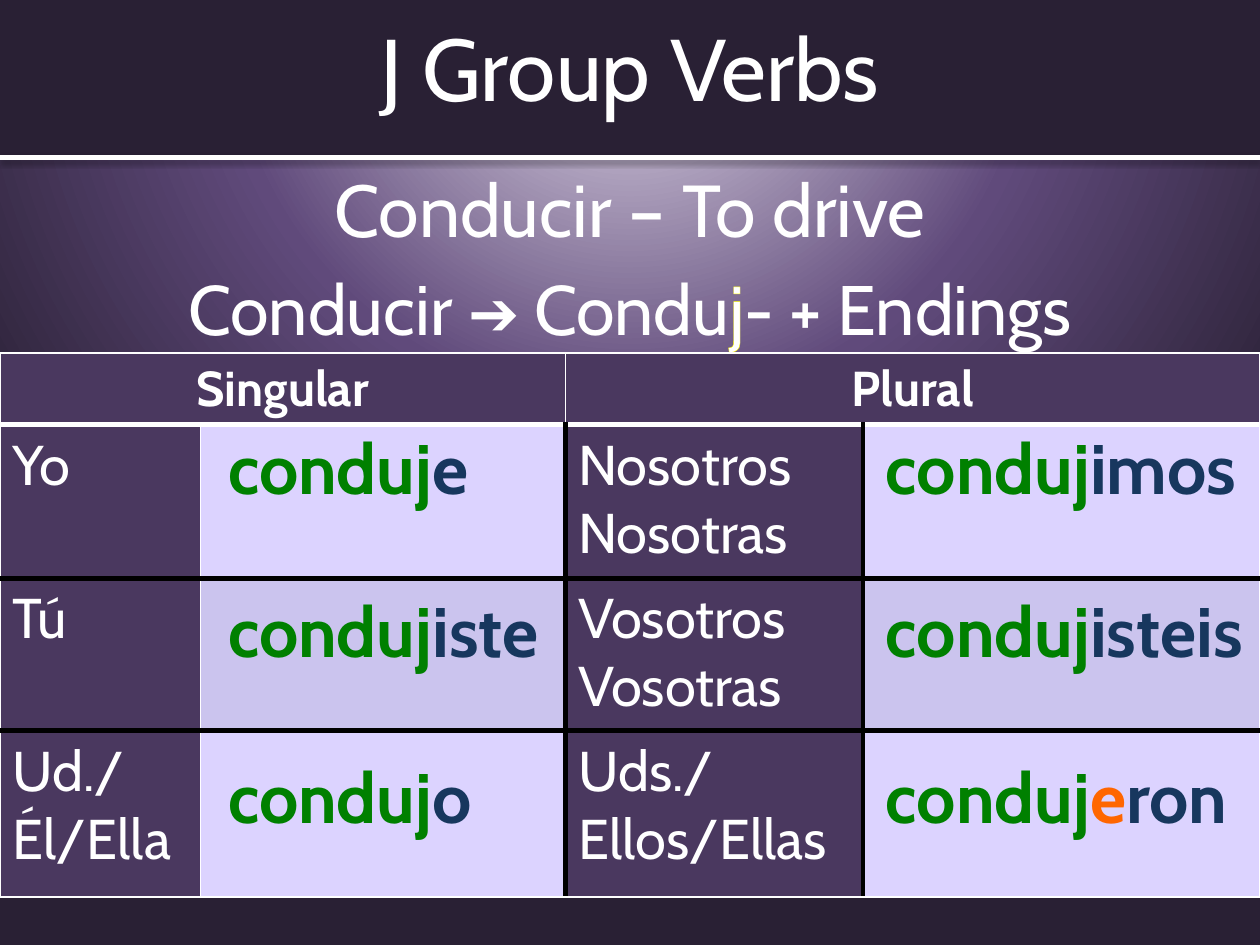
from lxml import etree
from pptx import Presentation
from pptx.dml.color import RGBColor
from pptx.enum.shapes import MSO_CONNECTOR, MSO_SHAPE
from pptx.enum.text import MSO_ANCHOR, PP_ALIGN
from pptx.oxml import parse_xml
from pptx.oxml.ns import nsdecls, qn
from pptx.util import Inches, Pt

WHITE = RGBColor(0xFF, 0xFF, 0xFF)
BLACK = RGBColor(0x00, 0x00, 0x00)
NIGHT = RGBColor(0x29, 0x20, 0x34)
PURPLE = RGBColor(0x4A, 0x38, 0x5F)
LILAC = RGBColor(0xDC, 0xD3, 0xFF)
LILAC_DARK = RGBColor(0xCB, 0xC4, 0xEE)
GREEN = RGBColor(0x00, 0x80, 0x00)
NAVY = RGBColor(0x17, 0x37, 0x5E)
ORANGE = RGBColor(0xFF, 0x66, 0x00)
YELLOW = RGBColor(0xFF, 0xFF, 0x00)

FONT = "Cabin"
NO_STYLE = "{2D5ABB26-0587-4C30-8999-92F81FD0307C}"
BACKGROUND_STOPS = [(0, "E6E0EC"), (52, "604A7B"), (100, "292034")]

TITLE = "J Group Verbs"
INFINITIVE = "Conducir – To drive"
STEM_RULE = [("Conducir ", 40, FONT), ("➔", 35, "Arial"), (" ", 30, "Arial"),
             ("Condu", 40, FONT), ("j", 40, FONT), ("- + Endings", 40, FONT)]
HEADINGS = ["Singular", "Plural"]
PRONOUNS = [
    (["Yo"], ["Nosotros", "Nosotras"]),
    (["Tú"], ["Vosotros", "Vosotras"]),
    (["Ud./Él/Ella"], ["Uds./Ellos/Ellas"]),
]
STEM = "conduj"
ENDINGS = [
    ([("e", NAVY)], [("imos", NAVY)]),
    ([("iste", NAVY)], [("isteis", NAVY)]),
    ([("o", NAVY)], [("e", ORANGE), ("ron", NAVY)]),
]

GRID_TOP = 2.8
COLUMN_WIDTHS = [1.59, 2.9, 2.36, 3.15]
ROW_HEIGHTS = [0.57, 1.22, 1.21, 1.32]
FORM_LEFTS = [1.71, 6.93]
FORM_WIDTHS = [2.72, 3.07]
FORM_TOPS = [3.34, 4.63, 5.95]
FORM_HEIGHT = 0.77


def add_run(paragraph, text, size, color=WHITE, font=FONT, bold=False):
    run = paragraph.add_run()
    run.text = text
    run.font.size = Pt(size)
    run.font.name = font
    run.font.bold = bold
    run.font.color.rgb = color
    return run


def set_background(slide):
    """Fill the slide with a circular gradient centred above its top edge."""
    slide.background.fill.gradient()
    stops = "".join(f'<a:gs pos="{pos * 1000}"><a:srgbClr val="{color}"/></a:gs>'
                    for pos, color in BACKGROUND_STOPS)
    gradient = parse_xml(
        f'<a:gradFill {nsdecls("a")} rotWithShape="1"><a:gsLst>{stops}</a:gsLst>'
        '<a:path path="circle"><a:fillToRect l="50000" t="-80000" r="50000" b="180000"/>'
        '</a:path></a:gradFill>')
    old = next(slide.element.iter(qn("a:gradFill")))
    old.getparent().replace(old, gradient)


def add_text_box(slide, top, height, anchor):
    box = slide.shapes.add_textbox(0, Inches(top), Inches(10), Inches(height))
    frame = box.text_frame
    frame.word_wrap = True
    frame.vertical_anchor = anchor
    frame.paragraphs[0].alignment = PP_ALIGN.CENTER
    return frame


def add_header(slide):
    band = slide.shapes.add_shape(MSO_SHAPE.RECTANGLE, 0, 0, Inches(10), Inches(1.25))
    band.shadow.inherit = False
    band.fill.solid()
    band.fill.fore_color.rgb = NIGHT
    band.line.fill.background()

    explanation = add_text_box(slide, 1.25, 5.2, MSO_ANCHOR.TOP)
    infinitive = explanation.paragraphs[0]
    infinitive.space_before = Pt(8)
    add_run(infinitive, INFINITIVE, 42)
    rule = explanation.add_paragraph()
    rule.alignment = PP_ALIGN.CENTER
    rule.space_before = Pt(8)
    for text, size, font in STEM_RULE:
        run = add_run(rule, text, size, font=font)
        if text == "j":
            run.font._element.insert(0, line_xml("ln", 0.75, YELLOW))

    divider = slide.shapes.add_connector(
        MSO_CONNECTOR.STRAIGHT, 0, Inches(1.25), Inches(10), Inches(1.25))
    divider.line.color.rgb = WHITE
    divider.line.width = Pt(3)
    divider._element.spPr.append(parse_xml(
        f'<a:effectLst {nsdecls("a")}><a:outerShdw blurRad="{Pt(3.1)}" dist="{Pt(1.6)}" '
        'dir="5400000" rotWithShape="0"><a:srgbClr val="000000"><a:alpha val="38000"/>'
        '</a:srgbClr></a:outerShdw></a:effectLst>'))

    title = add_text_box(slide, 0, 1.06, MSO_ANCHOR.MIDDLE)
    add_run(title.paragraphs[0], TITLE, 50)


def line_xml(tag, width, color):
    return parse_xml(f'<a:{tag} {nsdecls("a")} w="{Pt(width)}"><a:solidFill>'
                     f'<a:srgbClr val="{color}"/></a:solidFill></a:{tag}>')


def set_borders(cell, **sides):
    """Each side is a (width, colour) pair."""
    properties = cell._tc.get_or_add_tcPr()
    for position, side in enumerate("LRTB"):
        properties.insert(position, line_xml(f"ln{side}", *sides[side]))


def add_plain_table(slide, left, top, widths, heights):
    table = slide.shapes.add_table(
        len(heights), len(widths), Inches(left), Inches(top),
        Inches(sum(widths)), Inches(sum(heights))).table
    table.first_row = table.horz_banding = False
    next(table._tbl.iter(qn("a:tableStyleId"))).text = NO_STYLE
    for column, width in zip(table.columns, widths):
        column.width = Inches(width)
    for row, height in zip(table.rows, heights):
        row.height = Inches(height)
    return table


def add_pronoun_grid(slide):
    table = add_plain_table(slide, 0, GRID_TOP, COLUMN_WIDTHS, ROW_HEIGHTS)
    thin, thick, black = (1, WHITE), (3, WHITE), (3, BLACK)
    row_edges = [thin, thick, black, black, thin]
    column_edges = [thin, thin, black, black, thin]
    for r in range(len(ROW_HEIGHTS)):
        for c in range(len(COLUMN_WIDTHS)):
            cell = table.cell(r, c)
            cell.fill.solid()
            form_color = LILAC_DARK if r == 2 else LILAC
            cell.fill.fore_color.rgb = PURPLE if r == 0 or c % 2 == 0 else form_color
            edges = [thin] * 5 if r == 0 else column_edges
            set_borders(cell, L=edges[c], R=edges[c + 1],
                        T=row_edges[r], B=row_edges[r + 1])

    for number, heading in enumerate(HEADINGS):
        cell = table.cell(0, 2 * number)
        cell.merge(table.cell(0, 2 * number + 1))
        paragraph = cell.text_frame.paragraphs[0]
        paragraph.alignment = PP_ALIGN.CENTER
        add_run(paragraph, heading, 28, bold=True)

    for r, pair in enumerate(PRONOUNS, start=1):
        for number, pronouns in enumerate(pair):
            frame = table.cell(r, 2 * number).text_frame
            for i, pronoun in enumerate(pronouns):
                paragraph = frame.add_paragraph() if i else frame.paragraphs[0]
                add_run(paragraph, pronoun, 32)


def add_verb_forms(slide):
    for number, (left, width) in enumerate(zip(FORM_LEFTS, FORM_WIDTHS)):
        for top, pair in zip(FORM_TOPS, ENDINGS):
            table = add_plain_table(slide, left, top, [width], [FORM_HEIGHT])
            cell = table.cell(0, 0)
            cell.fill.background()
            paragraph = cell.text_frame.paragraphs[0]
            for text, color in [(STEM, GREEN), *pair[number]]:
                add_run(paragraph, text, 40, color, bold=True)


def main():
    presentation = Presentation()
    presentation.slide_width = Inches(10)
    presentation.slide_height = Inches(7.5)
    slide = presentation.slides.add_slide(presentation.slide_layouts[6])
    set_background(slide)
    add_header(slide)
    add_pronoun_grid(slide)
    add_verb_forms(slide)
    presentation.save("out.pptx")


if __name__ == "__main__":
    main()
